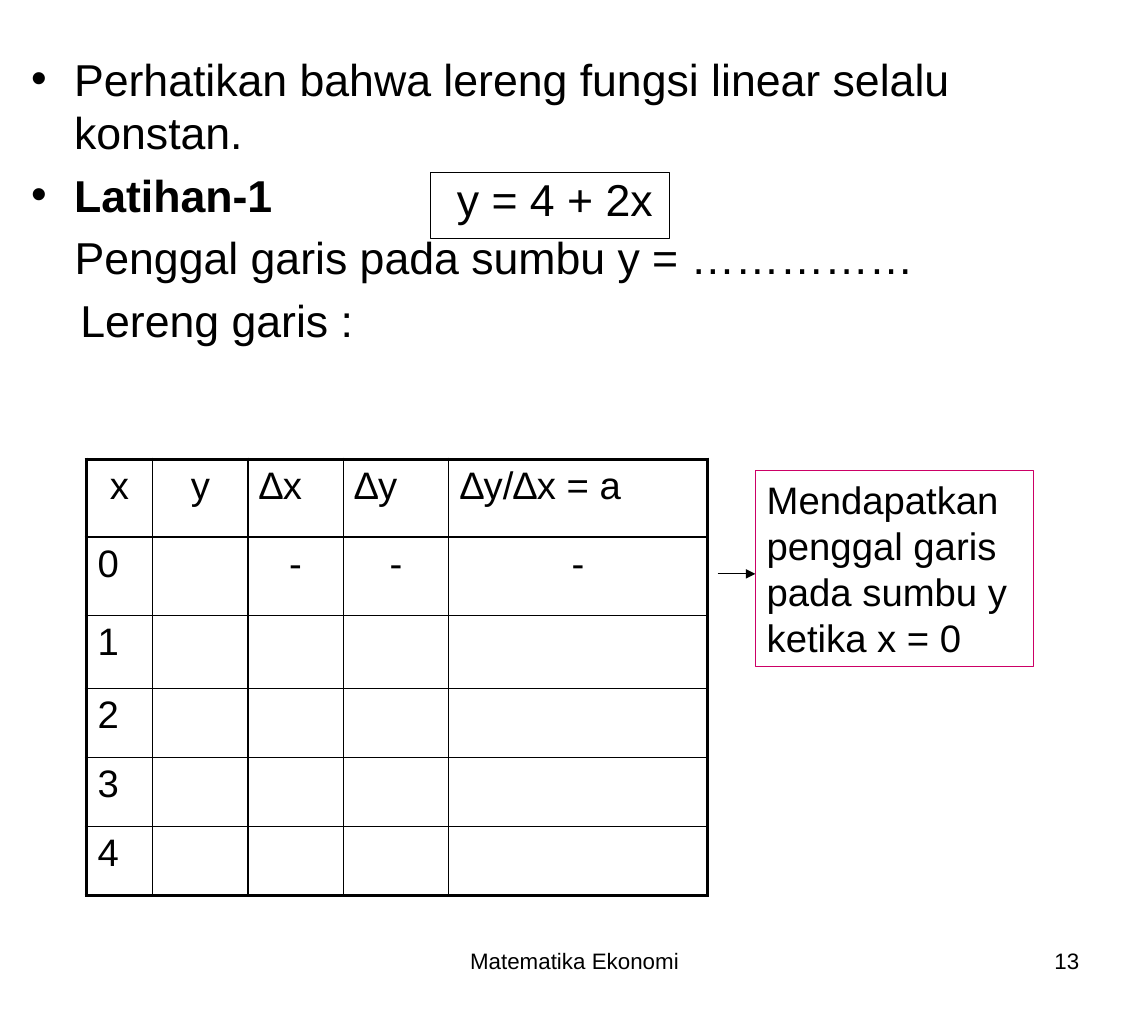
from lxml.etree import SubElement
from pptx import Presentation
from pptx.dml.color import RGBColor
from pptx.enum.shapes import MSO_CONNECTOR as Connector, MSO_SHAPE as Shape
from pptx.enum.text import MSO_ANCHOR as Anchor, MSO_AUTO_SIZE as AutoSize, PP_ALIGN as Align
from pptx.oxml.ns import qn
from pptx.util import Inches, Pt

COLORS = {"ink": "000000", "callout": "CC0066"}
FONT = "Arial"
THIN, THICK = Pt(1), Pt(2.25)

BODY = [
    {"text": "Perhatikan bahwa lereng fungsi linear selalu konstan."},
    {"text": "Latihan-1", "bold": True},
    {"text": "Penggal garis pada sumbu y = ……………", "margin": 0.38},
    {"text": "Lereng garis :", "margin": 0.43},
]
COLUMN_WIDTHS = [0.58, 0.83, 0.83, 0.92, 2.25]
ROW_HEIGHTS = [0.68, 0.68, 0.64, 0.6, 0.6, 0.6]
SLOPE_ROWS = [
    ["x", "y", "∆x", "∆y", "∆y/∆x = a"],
    ["0", "", "-", "-", "-"],
    *([str(x), "", "", "", ""] for x in range(1, 5)),
]
CENTERED = {"x", "y", "-"}


def color(name):
    return RGBColor.from_string(COLORS[name])


def set_attributes(target, values):
    for name, value in values.items():
        setattr(target, name, value)


def write(paragraph, text, size, align=Align.LEFT, bold=False):
    run = paragraph.add_run()
    run.text = text
    paragraph.alignment = align
    set_attributes(run.font, {"name": FONT, "size": Pt(size), "bold": bold})
    run.font.color.rgb = color("ink")


def fill_body(body):
    set_attributes(body, {"left": Inches(0.17), "top": Inches(0.4),
                          "width": Inches(9.25), "height": Inches(3.3)})
    frame = body.text_frame
    set_attributes(frame, {"auto_size": AutoSize.NONE, "vertical_anchor": Anchor.TOP})
    for index, item in enumerate(BODY):
        paragraph = frame.add_paragraph() if index else frame.paragraphs[0]
        write(paragraph, item["text"], 28, bold=item.get("bold", False))
        if "margin" in item:
            properties = paragraph._p.get_or_add_pPr()
            properties.set("marL", str(Inches(item["margin"])))
            properties.set("indent", "0")
            SubElement(properties, qn("a:buNone"))


def add_label(slide, text, left, width, align):
    box = slide.shapes.add_textbox(Inches(left), Inches(8.2), Inches(width), Inches(0.62))
    box.text_frame.word_wrap = True
    write(box.text_frame.paragraphs[0], text, 14, align)


def add_framed_text(slide, text, size, position, line_color, frame_format):
    box = slide.shapes.add_shape(Shape.RECTANGLE, *map(Inches, position))
    box.shadow.inherit = False
    box.fill.background()
    box.line.color.rgb = color(line_color)
    box.line.width = Pt(0.75)
    set_attributes(box.text_frame, {"word_wrap": True, "vertical_anchor": Anchor.TOP,
                                    **frame_format})
    write(box.text_frame.paragraphs[0], text, size)


def add_cell_borders(cell, widths):
    properties = cell._tc.get_or_add_tcPr()
    for side, width in widths.items():
        line = SubElement(properties, qn(f"a:ln{side}"), w=str(width))
        fill = SubElement(line, qn("a:solidFill"))
        SubElement(fill, qn("a:srgbClr"), val=COLORS["ink"])


def add_slope_table(slide):
    row_count, column_count = len(ROW_HEIGHTS), len(COLUMN_WIDTHS)
    table = slide.shapes.add_table(
        row_count, column_count, Inches(0.75), Inches(4),
        Inches(sum(COLUMN_WIDTHS)), Inches(sum(ROW_HEIGHTS))).table
    set_attributes(table, {"first_row": False, "horz_banding": False})
    for column, width in zip(table.columns, COLUMN_WIDTHS):
        column.width = Inches(width)
    for row, height in zip(table.rows, ROW_HEIGHTS):
        row.height = Inches(height)
    for r, texts in enumerate(SLOPE_ROWS):
        for c, text in enumerate(texts):
            cell = table.cell(r, c)
            outer = {"L": c == 0, "R": c == column_count - 1,
                     "T": r == 0, "B": r == row_count - 1}
            add_cell_borders(cell, {side: THICK if edge else THIN
                                    for side, edge in outer.items()})
            cell.fill.background()
            if text:
                write(cell.text_frame.paragraphs[0], text, 24,
                      Align.CENTER if text in CENTERED else Align.LEFT)


def add_arrow(slide, start, end):
    arrow = slide.shapes.add_connector(Connector.STRAIGHT, *map(Inches, start + end))
    arrow.line.color.rgb = color("ink")
    arrow.line.width = Pt(0.75)
    SubElement(arrow.line._get_or_add_ln(), qn("a:tailEnd"), type="triangle")
    SubElement(arrow._element.spPr, qn("a:effectLst"))


def main():
    presentation = Presentation()
    set_attributes(presentation, {"slide_width": Inches(10), "slide_height": Inches(9)})
    slide = presentation.slides.add_slide(presentation.slide_layouts[1])
    title = slide.shapes.title._element
    title.getparent().remove(title)

    add_label(slide, "Matematika Ekonomi", 3.42, 3.17, Align.CENTER)
    add_label(slide, "13", 7.17, 2.33, Align.RIGHT)
    fill_body(slide.placeholders[1])
    add_slope_table(slide)
    add_arrow(slide, (6.25, 5), (6.58, 5))
    add_framed_text(slide, "Mendapatkan penggal garis pada sumbu y ketika x = 0", 24,
                    (6.58, 4.1, 2.42, 1.71), "callout",
                    {"auto_size": AutoSize.SHAPE_TO_FIT_TEXT})
    add_framed_text(slide, "y = 4 + 2x", 28, (3.75, 1.5, 2.08, 0.58), "ink",
                    {"margin_left": Inches(0.23), "margin_right": 0, "margin_top": 0})
    presentation.save("out.pptx")


if __name__ == "__main__":
    main()
